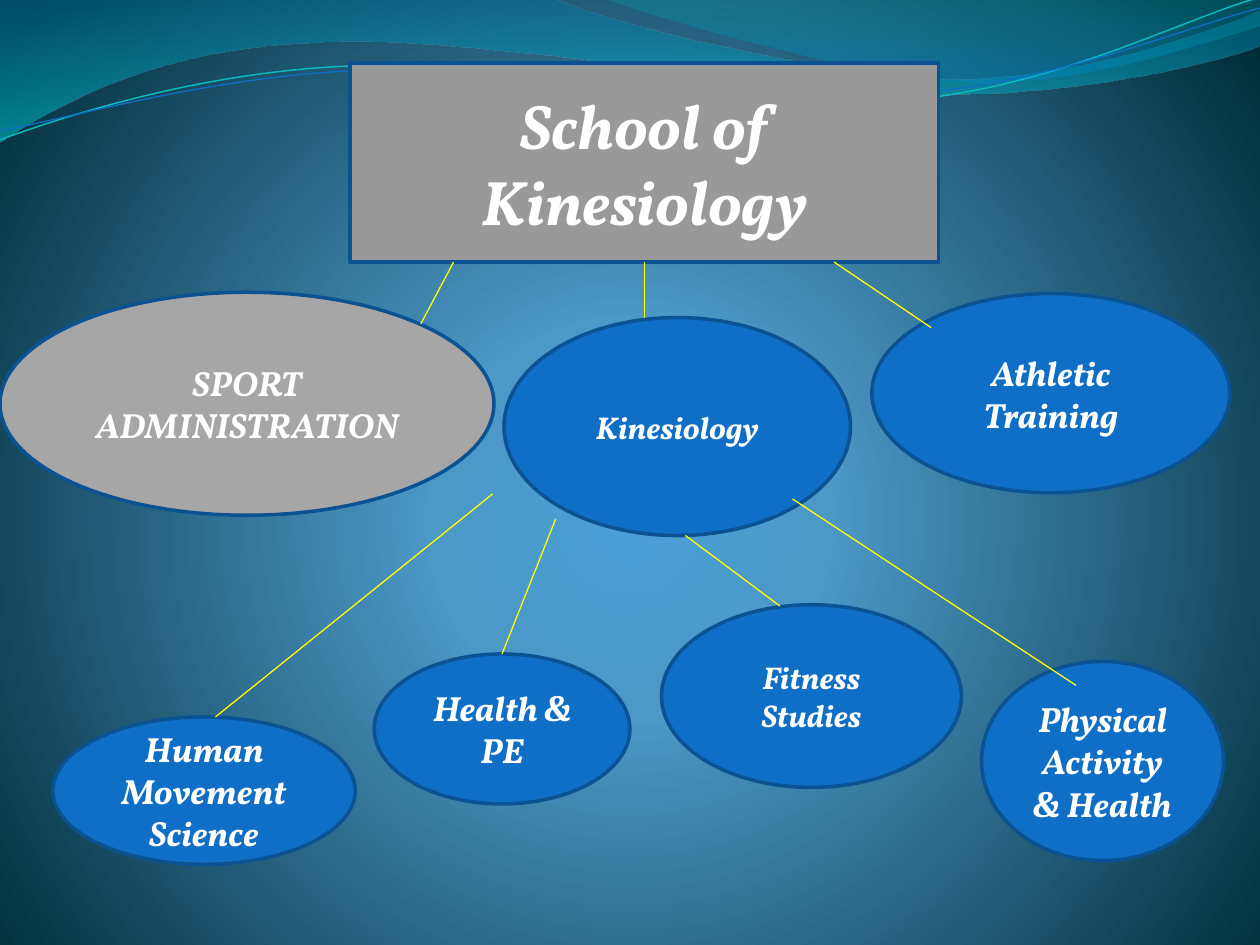
from dataclasses import dataclass

from lxml import etree
from pptx import Presentation
from pptx import oxml, util as u
from pptx.dml.color import RGBColor
from pptx.enum import shapes, text
from pptx.oxml.ns import nsdecls, qn


@dataclass(frozen=True)
class Theme:
    font: str = "Vollkorn"
    white: str = "FFFFFF"
    blue: str = "0F6FC6"
    outline: str = "0B5292"
    link: str = "FFFF00"
    teal: str = "0AB8BF"
    grey: str = "999999"
    light_grey: str = "A6A6A6"
    title: int = 36
    body: int = 20
    small: int = 18
    border: float = 2
    strand: float = 0.85
    hairline: float = 0.75


THEME = Theme()
WIDTH, HEIGHT = u.Inches(10), u.Inches(7.5)
STRAND_TILT = 357.3

BACKDROP = [(0, "4AA0D6", 100), (25, "4C98C7", 100), (100, "002C38", 100)]
BACKDROP_CENTRE = ('<a:path path="circle"><a:fillToRect l="10000" t="110000" '
                   'r="10000" b="100000"/></a:path>')
DOWNWARD = '<a:lin ang="5400000" scaled="0"/>'

BANDS = [
    ([(0, 0), (44, -0.1), (47.6, 2.3, 66.4, 8.4, 75.8, 8.4),
      (85.3, 8.4, 95.8, 3.5, 100, 1.2), (100.1, 4.8),
      (98.3, 5.9, 87, 10.1, 74.6, 10), (62.2, 10, 38.2, 3.7, 25.7, 4.5),
      (12.9, 4.8, 4.6, 11.1, -0.1, 15.1)],
     [(0, "0074A1", 45), (100, "00C6CF", 55)]),
    ([(47.9, -0.1), (50.9, 1.5, 68.2, 8.3, 76.9, 8.7),
      (85.6, 9.2, 96.1, 4.3, 100, 2.8), (100, 0)],
     [(0, "00A1A9", 30), (80, "008BBF", 45)]),
]
STRANDS = [
    ([(-0.2, 11.65), (4.7, 9.6, 15.8, 5.47, 27.8, 5.6),
      (39.6, 5.6, 59.1, 12.4, 71.2, 12),
      (83.2, 11.6, 94, 4.8, 100, 2.93)], THEME.teal, THEME.strand),
    ([(-0.2, 10.67), (4.6, 10, 16.4, 6, 28.3, 6.13),
      (40.3, 6.13, 59.6, 11.87, 71.6, 11.33),
      (83.5, 11.07, 94.2, 5.6, 100.2, 4)], THEME.blue, THEME.hairline),
]

SCHOOL, HEALTH = "School of Kinesiology", "Health & PE"
TIERS = [
    ([(SCHOOL, (27.8, 6.67, 46.7, 21.07), THEME.grey, THEME.title),
      ("SPORT ADMINISTRATION", (0, 30.93, 39.2, 23.6), THEME.light_grey, THEME.body),
      ("Athletic Training", (69.2, 31.07, 28.4, 21.07), THEME.blue, THEME.body)],
     [((36, 27.73), (33.4, 34.27)),
      (SCHOOL, (51.15, 34.4)),
      ((66.2, 27.73), (73.9, 34.67))]),
    ([("Kinesiology", (40, 33.6, 27.5, 23.07), THEME.blue, THEME.small),
      ("Human Movement Science", (4.2, 75.87, 24, 15.6), THEME.blue, THEME.body),
      ("Physical Activity & Health", (77.9, 70, 19.2, 21.07), THEME.blue, THEME.body),
      ("Fitness Studies", (52.5, 64, 23.8, 19.33), THEME.blue, THEME.small),
      (HEALTH, (29.7, 69.2, 20.3, 15.87), THEME.blue, THEME.body)],
     [((44.1, 54.93), HEALTH),
      ((39.1, 52.27), (17.1, 75.87)),
      ((54.4, 56.67), (61.9, 64.13)),
      ((62.9, 52.8), (85.4, 72.53))]),
]


def place(x, y):
    return round(WIDTH * x / 100), round(HEIGHT * y / 100)


def gradient(stops, direction):
    marks = "".join(
        f'<a:gs pos="{pos * 1000}"><a:srgbClr val="{color}">'
        f'<a:alpha val="{alpha * 1000}"/></a:srgbClr></a:gs>'
        for pos, color, alpha in stops)
    return oxml.parse_xml(
        f'<a:gradFill {nsdecls("a")} rotWithShape="1"><a:gsLst>{marks}</a:gsLst>'
        f'{direction}</a:gradFill>')


def swap_solid(fill, parent, replacement):
    fill.solid()
    parent.replace(parent.find(qn("a:solidFill")), replacement)


def add_wave(slide, segments, close):
    start, *anchors = [place(*segment[-2:]) for segment in segments]
    builder = slide.shapes.build_freeform(*start)
    builder.add_line_segments(anchors, close=close)
    wave = builder.convert_to_shape()
    wave.shadow.inherit = False
    for step, segment in zip(list(wave._element.iter(qn("a:lnTo"))), segments[1:]):
        if len(segment) == 6:
            step.tag = qn("a:cubicBezTo")
            for index in (0, 2):
                x, y = place(*segment[index:index + 2])
                control = etree.Element(qn("a:pt"), x=str(x - wave.left), y=str(y - wave.top))
                step.insert(index // 2, control)
    return wave


def style_line(line, color, width):
    line.color.rgb = RGBColor.from_string(color)
    line.width = u.Pt(width)


def write(frame, content, size, color=THEME.white, bold=True, italic=True):
    frame.word_wrap = True
    frame.vertical_anchor = text.MSO_ANCHOR.MIDDLE
    paragraph = frame.paragraphs[0]
    paragraph.alignment = text.PP_ALIGN.CENTER
    run = paragraph.add_run()
    run.text = content
    run.font.name, run.font.size = THEME.font, u.Pt(size)
    run.font.bold, run.font.italic = bold, italic
    run.font.color.rgb = RGBColor.from_string(color)


def add_unit(slide, name, box, color, size):
    outline = shapes.MSO_SHAPE.RECTANGLE if name == SCHOOL else shapes.MSO_SHAPE.OVAL
    unit = slide.shapes.add_shape(outline, *place(*box[:2]), *place(*box[2:]))
    unit.shadow.inherit = False
    unit.fill.solid()
    unit.fill.fore_color.rgb = RGBColor.from_string(color)
    style_line(unit.line, THEME.outline, THEME.border)
    write(unit.text_frame, name, size)
    return unit


def add_link(slide, start, end, units):
    begin = (0, 0) if start in units else place(*start)
    finish = (0, 0) if end in units else place(*end)
    link = slide.shapes.add_connector(shapes.MSO_CONNECTOR.STRAIGHT, *begin, *finish)
    if start in units:
        link.begin_connect(units[start], 2)
    if end in units:
        link.end_connect(units[end], 0)
    style_line(link.line, THEME.link, THEME.hairline)
    etree.SubElement(link._element.spPr, qn("a:effectLst"))


def main():
    deck = Presentation()
    deck.slide_width, deck.slide_height = WIDTH, HEIGHT
    slide = deck.slides.add_slide(deck.slide_layouts[6])

    backdrop = slide.background.fill
    backdrop.solid()
    swap_solid(backdrop, slide._element.cSld.find(qn("p:bg")).find(qn("p:bgPr")),
               gradient(BACKDROP, BACKDROP_CENTRE))

    for segments, stops in BANDS:
        band = add_wave(slide, segments, close=True)
        band.line.fill.background()
        swap_solid(band.fill, band._element.spPr, gradient(stops, DOWNWARD))
    for segments, color, width in STRANDS:
        strand = add_wave(slide, segments, close=False)
        strand.rotation = STRAND_TILT
        strand.fill.background()
        style_line(strand.line, color, width)

    units = {}
    for members, links in TIERS:
        for name, box, color, size in members:
            units[name] = add_unit(slide, name, box, color, size)
        for start, end in links:
            add_link(slide, start, end, units)

    deck.save("out.pptx")


if __name__ == "__main__":
    main()
